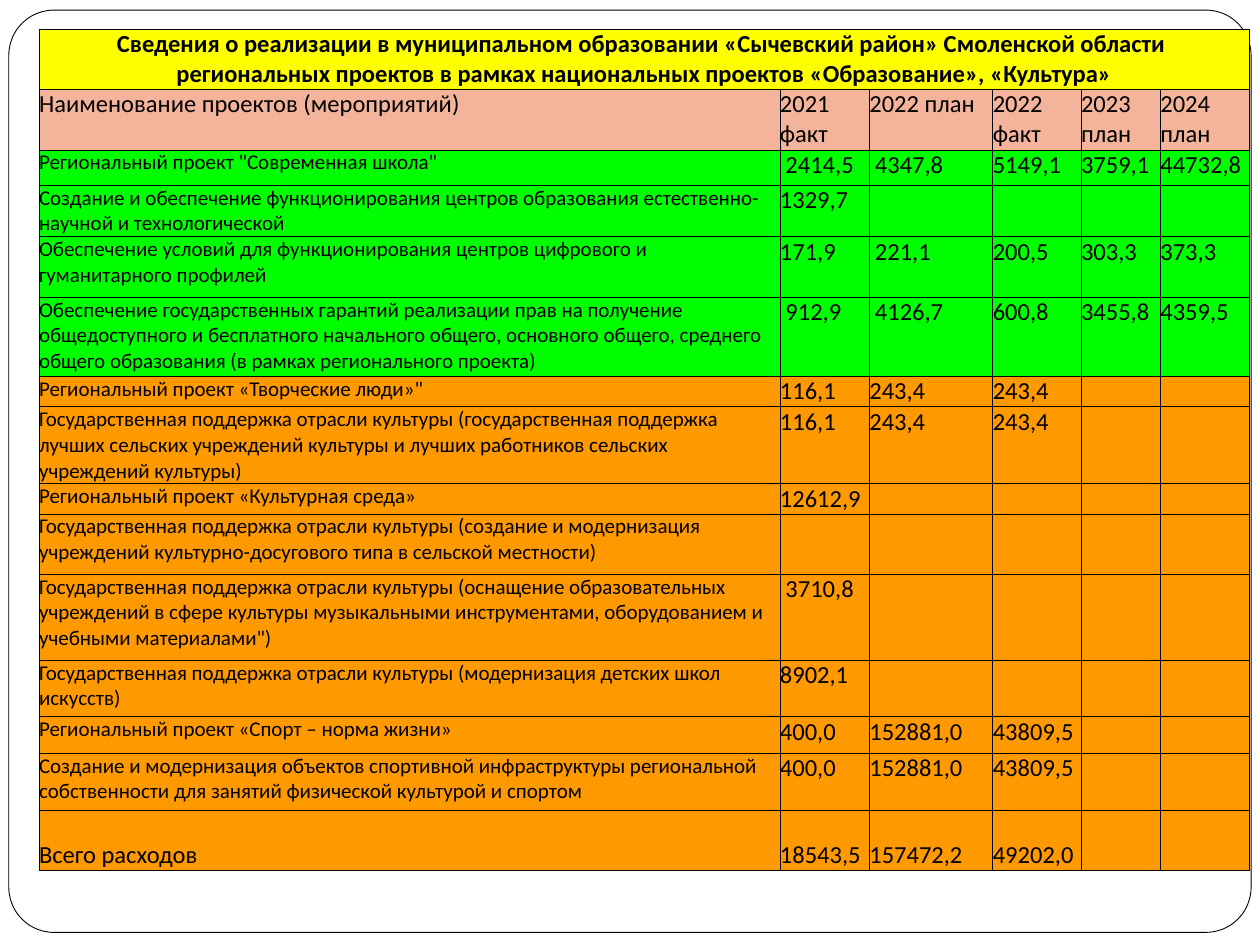
from lxml.etree import SubElement
from pptx import Presentation
from pptx.dml.color import RGBColor
from pptx.enum.shapes import MSO_SHAPE
from pptx.enum.text import MSO_ANCHOR, PP_ALIGN
from pptx.oxml.ns import qn
from pptx.util import Inches, Pt

HEX = {
    "ink": "000000", "paper": "FFFFFF", "title": "FFFF00",
    "head": "F4B39B", "school": "00FF00", "culture": "FF9900",
}
WIDTHS = [5.88, 0.71, 0.98, 0.7, 0.63, 0.71]

# Each row: height, fill, project name, values by year
TITLE = (
    "Сведения о реализации в муниципальном образовании «Сычевский район» Смоленской области \n"
    "региональных проектов в рамках национальных проектов «Образование», «Культура»"
)
ROWS = [
    (0.48, "title", TITLE, []),
    (0.48, "head", "Наименование проектов (мероприятий)",
     ["2021 факт", "2022 план", "2022 факт", "2023 план", "2024 план"]),
    (0.28, "school", 'Региональный проект "Современная школа"',
     [" 2414,5", " 4347,8", "5149,1", "3759,1", "44732,8"]),
    (0.41, "school", "Создание и обеспечение функционирования центров образования "
     "естественно-научной и технологической", ["1329,7"]),
    (0.48, "school", "Обеспечение условий для функционирования центров цифрового "
     "и гуманитарного профилей", ["171,9", " 221,1", "200,5", "303,3", "373,3"]),
    (0.63, "school", "Обеспечение государственных гарантий реализации прав на получение "
     "общедоступного и бесплатного начального общего, основного общего, среднего общего "
     "образования (в рамках регионального проекта)",
     [" 912,9", " 4126,7", "600,8", "3455,8", "4359,5"]),
    (0.24, "culture", 'Региональный проект «Творческие люди»"',
     ["116,1", "243,4", "243,4"]),
    (0.61, "culture", "Государственная поддержка отрасли культуры (государственная поддержка "
     "лучших сельских учреждений культуры и лучших работников сельских учреждений культуры)",
     ["116,1", "243,4", "243,4"]),
    (0.24, "culture", "Региональный проект «Культурная среда»", ["12612,9"]),
    (0.48, "culture", "Государственная поддержка отрасли культуры (создание и модернизация "
     "учреждений культурно-досугового типа в сельской местности)", []),
    (0.68, "culture", "Государственная поддержка отрасли культуры (оснащение образовательных "
     "учреждений в сфере культуры музыкальными инструментами, оборудованием и учебными "
     'материалами")', [" 3710,8"]),
    (0.45, "culture", "Государственная поддержка отрасли культуры (модернизация детских "
     "школ искусств)", ["8902,1"]),
    (0.29, "culture", "Региональный проект «Спорт – норма жизни»",
     ["400,0", "152881,0", "43809,5"]),
    (0.45, "culture", "Создание и модернизация объектов спортивной инфраструктуры "
     "региональной собственности для занятий физической культурой и спортом",
     ["400,0", "152881,0", "43809,5"]),
    (0.48, "culture", "Всего расходов", ["18543,5", "157472,2", "49202,0"]),
]


class Deck:
    font = "Calibri"
    line = 0.5

    def __init__(self, slide):
        self.slide = slide

    def color(self, name):
        return RGBColor.from_string(HEX[name])

    def frame(self, left, top, width, height, round_by):
        box = self.slide.shapes.add_shape(
            MSO_SHAPE.ROUNDED_RECTANGLE,
            Inches(left), Inches(top), Inches(width), Inches(height))
        box.adjustments[0] = round_by
        box.shadow.inherit = False
        box.fill.solid()
        box.fill.fore_color.rgb = self.color("paper")
        box.line.color.rgb = self.color("ink")
        box.line.width = Pt(self.line)

    def table(self, left, top, widths, heights):
        grid = self.slide.shapes.add_table(
            len(heights), len(widths), Inches(left), Inches(top),
            Inches(sum(widths)), Inches(sum(heights))).table
        for col, width in zip(grid.columns, widths):
            col.width = Inches(width)
        for row, height in zip(grid.rows, heights):
            row.height = Inches(height)
        return grid

    def cell(self, cell, text, fill, size=14, bold=False, align=PP_ALIGN.LEFT,
             anchor=MSO_ANCHOR.TOP):
        cell.margin_left = cell.margin_right = 0
        cell.margin_top = cell.margin_bottom = 0
        cell.vertical_anchor = anchor
        self.edges(cell)
        cell.fill.solid()
        cell.fill.fore_color.rgb = self.color(fill)
        cell.text = text
        for para in cell.text_frame.paragraphs:
            para.alignment = align
            font = para.font
            font.name, font.size, font.bold = self.font, Pt(size), bold
            font.color.rgb = self.color("ink")
            if not text:  # an empty cell takes its line height from here
                SubElement(para._p, qn("a:endParaRPr"), sz=str(size * 100))

    def edges(self, cell):
        props = cell._tc.get_or_add_tcPr()
        for side in ("a:lnL", "a:lnR", "a:lnT", "a:lnB"):
            edge = SubElement(props, qn(side), w=str(Pt(self.line)))
            paint = SubElement(edge, qn("a:solidFill"))
            SubElement(paint, qn("a:srgbClr"), val=HEX["ink"])


def main():
    prs = Presentation()
    prs.slide_width, prs.slide_height = Inches(10), Inches(7.5)
    deck = Deck(prs.slides.add_slide(prs.slide_layouts[6]))

    # Rounded page frame
    deck.frame(0.07, 0.08, 9.86, 7.32, 0.049)

    # Project table
    grid = deck.table(0.31, 0.23, WIDTHS, [row[0] for row in ROWS])
    last = len(ROWS) - 1
    for r, (_, fill, name, values) in enumerate(ROWS):
        texts = [name] + values + [""] * (len(WIDTHS) - 1 - len(values))
        anchor = MSO_ANCHOR.BOTTOM if r == last else MSO_ANCHOR.TOP
        for c, text in enumerate(texts):
            small = c == 0 and 1 < r < last
            deck.cell(grid.cell(r, c), text, fill, size=12 if small else 14,
                      bold=r == 0, anchor=anchor,
                      align=PP_ALIGN.CENTER if r == 0 else PP_ALIGN.LEFT)

    # Title row spans all columns
    grid.cell(0, 0).merge(grid.cell(0, len(WIDTHS) - 1))

    prs.save("out.pptx")


if __name__ == "__main__":
    main()
